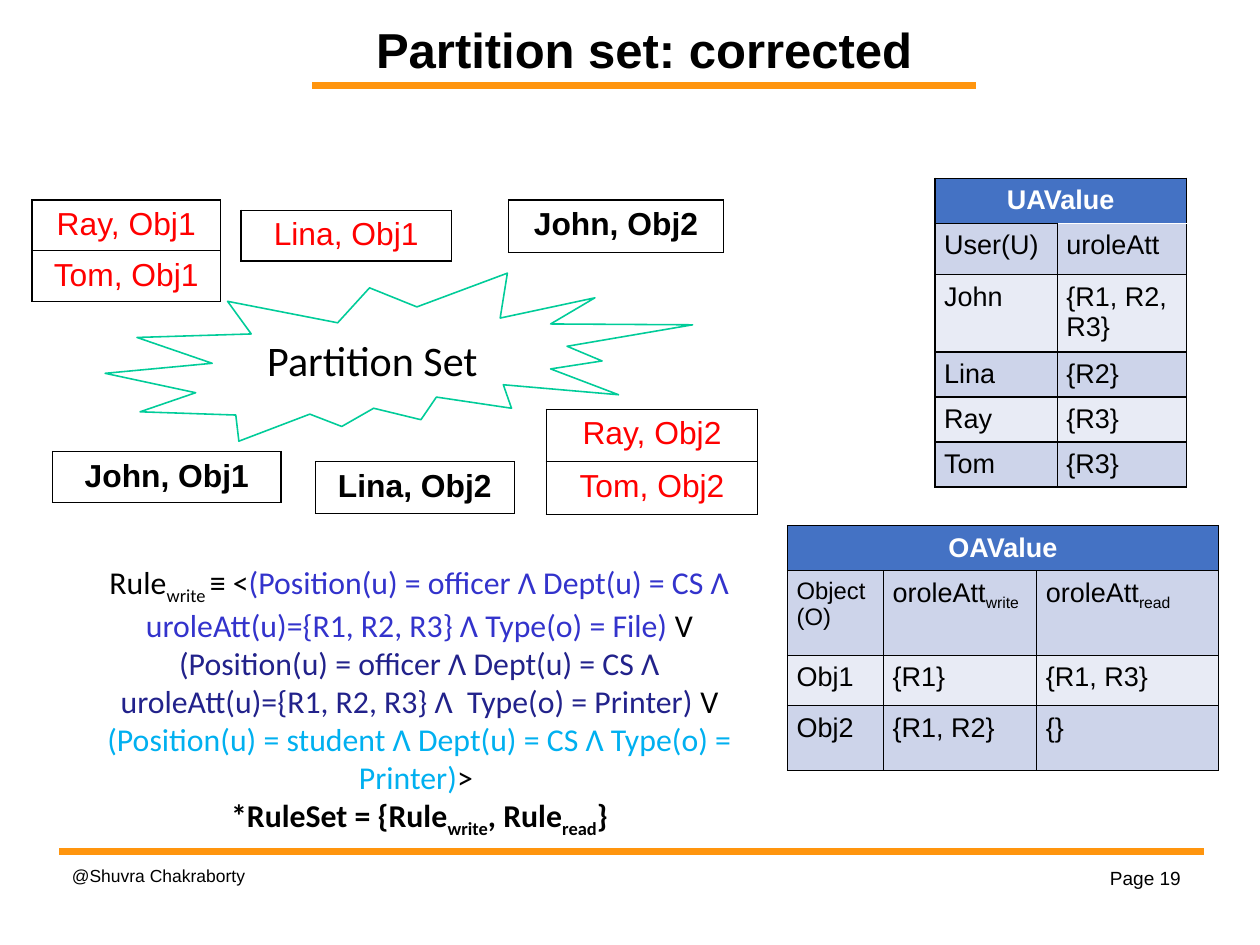
from lxml.etree import SubElement
from pptx import Presentation
from pptx.dml.color import RGBColor
from pptx.enum.shapes import MSO_CONNECTOR, MSO_SHAPE
from pptx.enum.text import MSO_ANCHOR, PP_ALIGN
from pptx.oxml import parse_xml
from pptx.oxml.ns import nsdecls, qn
from pptx.util import Inches, Pt

HUE = {
    "black": "000000", "white": "FFFFFF", "red": "FF0000",
    "orange": "FF950E", "green": "00CC99", "head": "4472C4",
    "dark": "CDD4EA", "light": "E8EBF5",
    "blue": "3333CC", "navy": "22228B", "sky": "00B0F0",
}
LEFT, MID, RIGHT = PP_ALIGN.LEFT, PP_ALIGN.CENTER, PP_ALIGN.RIGHT


def rgb(name):
    return RGBColor.from_string(HUE[name])


def add_runs(para, text, size, hue="black", bold=False, face="Arial"):
    for i, part in enumerate(text.split("_")):
        if not part:
            continue
        run = para.add_run()
        run.text = part
        font = run.font
        font.name, font.size, font.bold = face, Pt(size), bold
        font.color.rgb = rgb(hue)
        if i % 2:
            run._r.get_or_add_rPr().set("baseline", "-25000")


def add_box(slide, box, anchor=MSO_ANCHOR.TOP):
    frame = slide.shapes.add_textbox(*map(Inches, box)).text_frame
    frame.word_wrap = True
    frame.vertical_anchor = anchor
    return frame


def add_label(slide, box, text, size, align, anchor, bold=False):
    para = add_box(slide, box, anchor).paragraphs[0]
    para.alignment = align
    add_runs(para, text, size, bold=bold)
    return para


def add_rule(slide, x, y, width):
    line = slide.shapes.add_connector(
        MSO_CONNECTOR.STRAIGHT, Inches(x), Inches(y), Inches(x + width), Inches(y))
    line.line.color.rgb = rgb("orange")
    line.line.width = Pt(4.31)
    props = line._element.spPr
    props.find(qn("a:ln")).set("cap", "sq")
    SubElement(props, qn("a:effectLst"))


def set_edges(cell, top):
    props = cell._tc.get_or_add_tcPr()
    for side in "LRTB":
        hue = HUE[top if side == "T" else "black"]
        props.append(parse_xml(
            f'<a:ln{side} {nsdecls("a")} w="{Pt(0.96)}"><a:solidFill>'
            f'<a:srgbClr val="{hue}"/></a:solidFill></a:ln{side}>'))


def add_grid(slide, x, y, cols, rows):
    table = slide.shapes.add_table(
        len(rows), len(cols), Inches(x), Inches(y),
        Inches(sum(cols)), Inches(sum(rows))).table
    table.first_row = table.horz_banding = False
    for col, width in zip(table.columns, cols):
        col.width = Inches(width)
    for row, height in zip(table.rows, rows):
        row.height = Inches(height)
    return table


def fill_cell(cell, text, size, align, hue="black", bold=False, back=None, top="black"):
    cell.margin_left = cell.margin_right = Inches(0.08)
    cell.margin_top, cell.margin_bottom = Inches(0.06), Inches(0.05)
    set_edges(cell, top)
    if back:
        cell.fill.solid()
        cell.fill.fore_color.rgb = rgb(back)
    else:
        cell.fill.background()
    frame = cell.text_frame
    for i, line in enumerate(text.split("\n")):
        para = frame.add_paragraph() if i else frame.paragraphs[0]
        para.alignment = align
        add_runs(para, line, size, hue, bold)


def add_pairs(slide, box, names, hue):
    x, y, width, height = box
    table = add_grid(slide, x, y, [width], [height] * len(names))
    for i, name in enumerate(names):
        fill_cell(table.cell(i, 0), name, 20, MID, hue, hue == "black")


def add_values(slide, x, y, cols, rows, title, body, odd=(None, None)):
    table = add_grid(slide, x, y, cols, rows)
    table.cell(0, 0).merge(table.cell(0, len(cols) - 1))
    for c in range(len(cols)):
        fill_cell(table.cell(0, c), "" if c else title, 17, MID, "white", True, "head")
    for r, line in enumerate(body, 1):
        for c, text in enumerate(line):
            fill_cell(table.cell(r, c), text, 15 if "\n" in text else 17, LEFT,
                      back="dark" if r % 2 else "light",
                      top="white" if (r, c) == odd else "black")


def add_burst(slide, box):
    burst = slide.shapes.add_shape(MSO_SHAPE.EXPLOSION2, *map(Inches, box))
    burst.shadow.inherit = False
    burst.fill.solid()
    burst.fill.fore_color.rgb = rgb("white")
    burst.line.color.rgb = rgb("green")
    burst.line.width = Pt(1)
    burst.text_frame.vertical_anchor = MSO_ANCHOR.MIDDLE
    para = burst.text_frame.paragraphs[0]
    para.alignment = MID
    add_runs(para, "Partition Set ", 26.5, face="Calibri")


def add_policy(slide, box):
    frame = add_box(slide, box)
    para = frame.paragraphs[0]
    para.alignment = MID
    for text, hue in [
        ("Rule_write _≡ <", "black"),
        ("(Position(u) = officer Λ Dept(u) = CS Λ uroleAtt(u)={R1, R2, R3} Λ Type(o) = File)", "blue"),
        (" V ", "black"),
        ("(Position(u) = officer Λ Dept(u) = CS Λ uroleAtt(u)={R1, R2, R3} Λ  Type(o) = Printer) ", "navy"),
        ("V ", "black"),
        ("(Position(u) = student Λ Dept(u) = CS Λ Type(o) = Printer)", "sky"),
        ("> ", "black"),
    ]:
        add_runs(para, text, 20, hue, face="Calibri")
    para = frame.add_paragraph()
    para.alignment = MID
    add_runs(para, "*RuleSet = {Rule_write_, Rule_read_}", 20, bold=True, face="Calibri")


def main():
    deck = Presentation()
    deck.slide_width = Inches(28 / 2.54)
    deck.slide_height = Inches(21 / 2.54)
    slide = deck.slides.add_slide(deck.slide_layouts[6])

    add_rule(slide, 2.76, 0.75, 5.75)
    add_rule(slide, 0.55, 7.45, 9.95)
    title = add_label(slide, (2.66, 0.18, 5.95, 0.56), "Partition set: corrected",
                      30.9, MID, MSO_ANCHOR.BOTTOM, True)
    title.line_spacing = 0.9
    add_label(slide, (9.01, 7.53, 1.42, 0.3), "Page 19", 12, RIGHT, MSO_ANCHOR.TOP)
    add_label(slide, (0.53, 7.46, 3.03, 0.4), "@Shuvra Chakraborty", 11, LEFT,
              MSO_ANCHOR.MIDDLE)

    add_burst(slide, (0.92, 2.39, 5.14, 1.47))
    for box, names, hue in [
        ((0.46, 3.95, 2, 0.44), ["John, Obj1"], "black"),
        ((2.11, 1.84, 1.84, 0.44), ["Lina, Obj1"], "red"),
        ((2.76, 4.04, 1.74, 0.45), ["Lina, Obj2"], "black"),
        ((4.45, 1.75, 1.88, 0.46), ["John, Obj2"], "black"),
        ((0.28, 1.75, 1.65, 0.44), ["Ray, Obj1", "Tom, Obj1"], "red"),
        ((4.78, 3.58, 1.85, 0.46), ["Ray, Obj2", "Tom, Obj2"], "red"),
    ]:
        add_pairs(slide, box, names, hue)
    add_policy(slide, (0.64, 4.87, 6.06, 2.48))

    add_values(slide, 8.18, 1.56, [1.07, 1.13], [0.39, 0.45, 0.66, 0.39, 0.39, 0.39],
               "UAValue", [
                   ["User(U)", "uroleAtt"],
                   ["John", "{R1, R2, R3}"],
                   ["Lina", "{R2}"],
                   ["Ray", "{R3}"],
                   ["Tom", "{R3}"],
               ], (1, 1))
    add_values(slide, 6.89, 4.6, [0.84, 1.34, 1.59], [0.39, 0.74, 0.44, 0.57],
               "OAValue", [
                   ["Object\n(O)", "oroleAtt_write", "oroleAtt_read"],
                   ["Obj1", "{R1}", "{R1, R3}"],
                   ["Obj2", "{R1, R2}", "{}"],
               ])
    deck.save("out.pptx")


if __name__ == "__main__":
    main()
